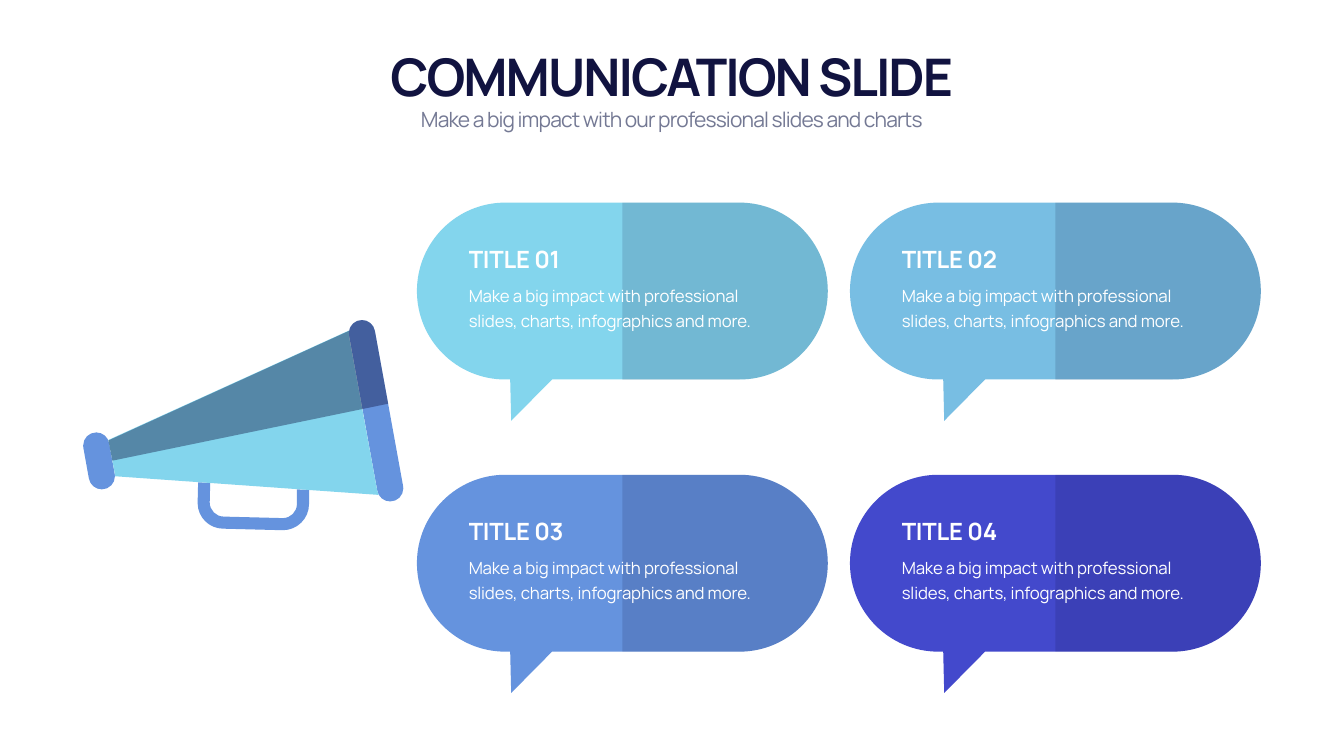
from math import cos, radians, sin, tan

from lxml import etree
from pptx import Presentation
from pptx.dml.color import RGBColor
from pptx.enum.text import MSO_ANCHOR, MSO_AUTO_SIZE, PP_ALIGN
from pptx.oxml.ns import qn
from pptx.util import Inches, Pt

LEFT, CENTER = PP_ALIGN.LEFT, PP_ALIGN.CENTER
TOP, BOTTOM = MSO_ANCHOR.TOP, MSO_ANCHOR.BOTTOM
GROW = MSO_AUTO_SIZE.SHAPE_TO_FIT_TEXT
FONT = "Manrope"
NAVY, GREY, WHITE = "111340", "747994", "FFFFFF"
CYAN, SKY, BLUE, INDIGO = "83D5ED", "78BEE3", "6593DE", "4349CC"

prs = Presentation()
prs.slide_width, prs.slide_height = Inches(26.66), Inches(15)
slide = prs.slides.add_slide(prs.slide_layouts[6])


def add_outline(shapes, parts, color, opacity=100):
    """Each part is a corner (x, y) or an arc (cx, cy, r, start, end) in degrees."""
    points, curves = [], []
    for part in parts:
        if len(part) == 2:
            points.append(part)
            continue
        cx, cy, r, start, end = part
        # One Bezier curve per quadrant touched
        stops = [start, *(a for a in range(-90, 361, 90) if min(start, end) < a < max(start, end)), end]
        points.append((cx + r * cos(radians(start)), cy + r * sin(radians(start))))
        for a, b in zip(stops, stops[1:]):
            k = 4 / 3 * tan(radians(b - a) / 4)
            a, b = radians(a), radians(b)
            curves.append(len(points))
            points += [(cx + r * (cos(a) - k * sin(a)), cy + r * (sin(a) + k * cos(a))),
                       (cx + r * (cos(b) + k * sin(b)), cy + r * (sin(b) - k * cos(b))),
                       (cx + r * cos(b), cy + r * sin(b))]
    points = [(Inches(x), Inches(y)) for x, y in points]
    builder = shapes.build_freeform(*points[0], scale=1.0)
    builder.add_line_segments(points[1:], close=True)
    s = builder.convert_to_shape()
    # Turn the three steps of each curve into one cubic segment
    outline = next(s._element.iter(qn("a:path")))
    steps = list(outline)
    for i in curves:
        curve = etree.Element(qn("a:cubicBezTo"))
        steps[i].addprevious(curve)
        for step in steps[i:i + 3]:
            curve.append(step[0])
            outline.remove(step)
    s.shadow.inherit = False
    s.line.fill.background()
    s.fill.solid()
    s.fill.fore_color.rgb = RGBColor.from_string(color)
    if opacity < 100:
        clr = s._element.spPr.find(qn("a:solidFill"))[0]
        etree.SubElement(clr, qn("a:alpha")).set("val", str(opacity * 1000))


def add_text(text, x, y, w, h, size, color, spacing,
             bold=False, align=LEFT, anchor=TOP, line_spacing=None):
    tf = slide.shapes.add_textbox(Inches(x), Inches(y), Inches(w), Inches(h)).text_frame
    tf.word_wrap = True
    tf.auto_size = GROW
    tf.vertical_anchor = anchor
    tf.text = text
    p = tf.paragraphs[0]
    p.alignment = align
    if line_spacing:
        p.line_spacing = Pt(line_spacing)
    r = p.runs[0]
    r.font.name, r.font.size, r.font.bold = FONT, Pt(size), bold
    r.font.color.rgb = RGBColor.from_string(color)
    r._r.get_or_add_rPr().set("spc", str(round(spacing * 100)))


# Speech bubbles: two columns, two rows, right half shaded
W, H = 8.15, 3.51
R = H / 2
corners = [(8.27 + col * 8.59, 4.02 + row * 5.4) for row in range(2) for col in range(2)]
for (x, y), color in zip(corners, [CYAN, SKY, BLUE, INDIGO]):
    right_end = (x + W - R, y + R, R, -90, 90)
    tail = [(x + 2.68, y + H), (x + 1.87, y + 4.33), (x + 1.85, y + H)]
    add_outline(slide.shapes, [right_end, *tail, (x + R, y + R, R, 90, 270)], color)
    add_outline(slide.shapes, [right_end, (x + W / 2, y + H), (x + W / 2, y)], NAVY, 15)

# Megaphone: mouthpiece and rim, capsules tilted by 10 degrees
megaphone = slide.shapes.add_group_shape().shapes
rim_top = (7.18, 6.61, 0.26, 170, 350)
add_outline(megaphone, [(1.91, 8.84, 0.26, 170, 350), (2.02, 9.45, 0.26, -10, 170)], BLUE)
add_outline(megaphone, [rim_top, (7.74, 9.69, 0.26, -10, 170)], BLUE)

# Megaphone: handle, outer edge then inner edge
add_outline(megaphone, [
    (3.93, 9.57), (4.43, 9.98, 0.51, 180, 90), (5.61, 10, 0.52, 90, 0), (6.13, 9.72),
    (5.89, 9.71), (5.61, 10, 0.28, 0, 90), (4.44, 9.97, 0.28, 90, 180), (4.17, 9.58)], BLUE)

# Megaphone: horn and the shade over its upper half
add_outline(megaphone, [(6.92, 6.56), (2.15, 8.73), (2.28, 9.4), (2.28, 9.45),
                        (7.51, 9.82), (7.48, 9.72), (6.92, 6.66)], CYAN)
add_outline(megaphone, [(7.18, 6.61, 0.26, 190, 350), (7.7, 8.01), (2.23, 9.14),
                        (2.15, 8.74)], NAVY, 40)

# Heading
add_text("COMMUNICATION SLIDE", 1.66, 0.82, 23.33, 1.35, 74, NAVY, -2.9,
         bold=True, align=CENTER, anchor=BOTTOM)
add_text("Make a big impact with our professional slides and charts",
         1.66, 2.07, 23.33, 0.61, 30, GREY, -1.2, align=CENTER)

# Bubble texts
for i, (x, y) in enumerate(corners, 1):
    add_text(f"TITLE {i:02}", x + 0.93, y + 0.78, 6.31, 0.67, 34, WHITE, -0.3,
             bold=True, anchor=BOTTOM)
    add_text("Make a big impact with professional slides, charts, infographics and more.",
             x + 0.93, y + 1.49, 6.31, 1.09, 24, WHITE, -0.2, line_spacing=36)

prs.save("out.pptx")
